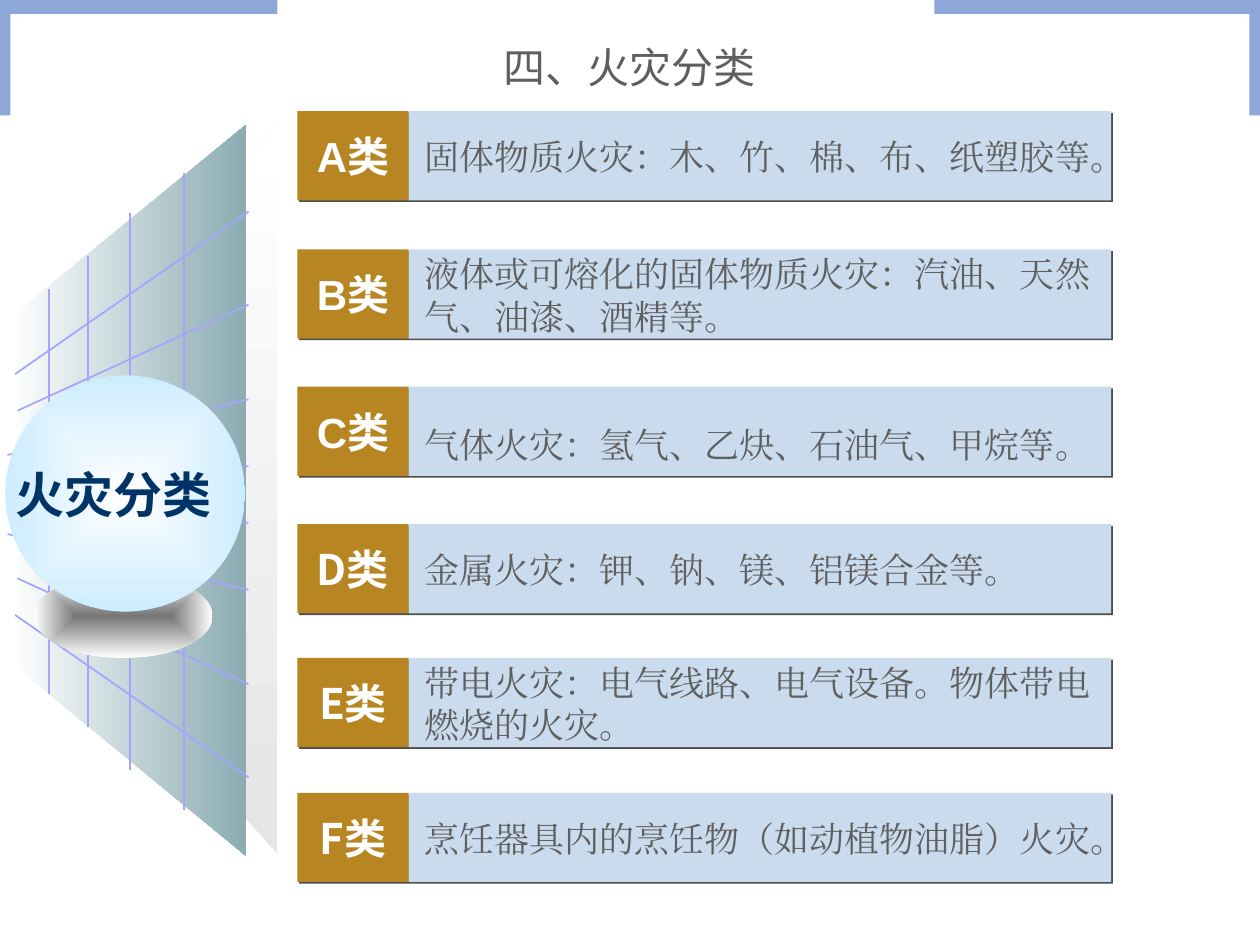
from dataclasses import dataclass

from lxml.etree import SubElement
from pptx import Presentation
from pptx.dml.color import RGBColor
from pptx.enum.lang import MSO_LANGUAGE_ID as Language
from pptx.enum.shapes import MSO_CONNECTOR as Connector, MSO_SHAPE as Shape
from pptx.enum.text import MSO_ANCHOR as Anchor, MSO_AUTO_SIZE as AutoSize, PP_ALIGN as Align
from pptx.oxml.ns import qn
from pptx.util import Pt


@dataclass(frozen=True)
class Theme:
    label: str = "B78623"
    bar: str = "CADBEE"
    shadow: str = "4D4D4D"
    text: str = "5F5F5F"
    white: str = "FFFFFF"
    navy: str = "003366"
    grid: str = "A4A4FF"
    corner: str = "1A50B2"
    wall: str = "8BACB3"
    edge: str = "E5E5E5"
    ball: str = "CCECFF"
    ball_shadow: str = "767676"
    title_size: int = 24
    label_size: int = 24
    body_size: int = 20
    ball_size: int = 28


THEME = Theme()

CLASSES = [
    ("A类", "Arial", 63.5, 7.5, 360, "固体物质火灾：木、竹、棉、布、纸塑胶等。"),
    ("B类", "Arial", 142.5, 7.5, 330, "液体或可熔化的固体物质火灾：汽油、天然\n气、油漆、酒精等。"),
    ("C类", "Arial", 221, 14.5, 352, "气体火灾：氢气、乙炔、石油气、甲烷等。"),
    ("D类", "Noto Sans CJK KR", 299.5, 7.5, 330, "金属火灾：钾、钠、镁、铝镁合金等。"),
    ("E类", "Noto Sans CJK KR", 376, 7.5, 327, "带电火灾：电气线路、电气设备。物体带电\n燃烧的火灾。"),
    ("F类", "Noto Sans CJK KR", 453, 7.5, 330, "烹饪器具内的烹饪物（如动植物油脂）火灾。"),
]
LABEL_LEFT, LABEL_WIDTH, BAR_LEFT, BAR_WIDTH, ROW_HEIGHT = 170, 63.5, 233.5, 401.5, 51

GRID_RIGHT = 142
SLOPE_AXIS = 282.6
SLOPES = [(8.6, 213.8, 121), (10, 234.7, 174.2), (4.3, 260, 228.2), (10, 276.5, 266.4)]
VERTICAL_AXIS = 280.8
VERTICALS = [(105, 181.8), (74.2, 159.1), (50.4, 134.6), (28.1, 115.9)]


def color(value):
    return RGBColor.from_string(value)


def write_text(shape, text, font_name, size, text_color, align, bold=False, spacing=None):
    frame = shape.text_frame
    frame.text = text
    frame.vertical_anchor = Anchor.MIDDLE
    for paragraph in frame.paragraphs:
        paragraph.alignment = align
        if spacing:
            paragraph.line_spacing = Pt(spacing)
        for run in paragraph.runs:
            font = run.font
            font.name, font.size, font.bold = font_name, Pt(size), bold
            font.language_id = Language.SIMPLIFIED_CHINESE
            font.color.rgb = color(text_color)
            latin = font._element.find(qn("a:latin"))
            east_asian = SubElement(font._element, qn("a:ea"), typeface=font_name)
            latin.addnext(east_asian)


def add_box(slide, kind, left, top, width, height, fill=None):
    shape = slide.shapes.add_shape(kind, Pt(left), Pt(top), Pt(width), Pt(height))
    shape.shadow.inherit = False
    shape.line.fill.background()
    if fill:
        shape.fill.solid()
        shape.fill.fore_color.rgb = color(fill)
    else:
        shape.fill.background()
    return shape


def add_hard_shadow(shape):
    effects = shape._element.spPr.find(qn("a:effectLst"))
    shadow = SubElement(effects, qn("a:outerShdw"), dist=str(Pt(1.4)), dir="2700000",
                        algn="ctr", rotWithShape="0")
    SubElement(shadow, qn("a:srgbClr"), val=THEME.shadow)


def add_outline(slide, points):
    corners = [(Pt(x), Pt(y)) for x, y in points]
    builder = slide.shapes.build_freeform(*corners[0], scale=1)
    builder.add_line_segments(corners[1:], close=True)
    shape = builder.convert_to_shape()
    shape.shadow.inherit = False
    shape.line.fill.background()
    return shape


def set_gradient(shape, first, last, angle=None):
    fill = shape.fill
    fill.gradient()
    for stop, value in zip(fill.gradient_stops, (first, last)):
        stop.color.rgb = color(value)
    if angle is not None:
        fill.gradient_angle = angle
        return
    gradient = shape._element.spPr.find(qn("a:gradFill"))
    gradient.remove(gradient.find(qn("a:lin")))
    center = SubElement(gradient, qn("a:path"), {"path": "shape"})
    SubElement(center, qn("a:fillToRect"), l="50000", t="50000", r="50000", b="50000")


def add_grid_line(slide, x1, y1, x2, y2):
    line = slide.shapes.add_connector(Connector.STRAIGHT, Pt(x1), Pt(y1), Pt(x2), Pt(y2))
    line.line.color.rgb = color(THEME.grid)
    line.line.width = Pt(1)
    SubElement(line._element.spPr, qn("a:effectLst"))


def add_title(slide, text):
    title = slide.shapes.title
    title.left, title.top, title.width, title.height = Pt(80.5), Pt(19), Pt(558), Pt(38)
    write_text(title, text, "Arial", THEME.title_size, THEME.text, Align.CENTER)
    title.text_frame.auto_size = AutoSize.NONE


def add_class_row(slide, label_text, label_font, top, text_offset, text_width, description):
    label = add_box(slide, Shape.RECTANGLE, LABEL_LEFT, top, LABEL_WIDTH, ROW_HEIGHT, THEME.label)
    label.text_frame.word_wrap = False
    write_text(label, label_text, label_font, THEME.label_size, THEME.white, Align.CENTER, True)
    bar = add_box(slide, Shape.RECTANGLE, BAR_LEFT, top, BAR_WIDTH, ROW_HEIGHT, THEME.bar)
    for shape in (label, bar):
        add_hard_shadow(shape)
    body = add_box(slide, Shape.ROUNDED_RECTANGLE, BAR_LEFT, top + text_offset, text_width, 36.5)
    body.text_frame.word_wrap = False
    write_text(body, description, "Times New Roman", THEME.body_size, THEME.text,
               Align.LEFT, spacing=24.5)


def add_wall(slide):
    edge = add_outline(slide, [(158.5, 488), (137.5, 464.5), (137.5, 94.5), (158.5, 70.5)])
    set_gradient(edge, THEME.edge, THEME.white, 90)
    wall = add_outline(slide, [(140.5, 489), (6, 378.5), (6, 181.5), (140.5, 71.5)])
    set_gradient(wall, THEME.white, THEME.wall, 0)
    for left, left_y, right_y in SLOPES:
        add_grid_line(slide, left, left_y, GRID_RIGHT, right_y)
        add_grid_line(slide, left, 2 * SLOPE_AXIS - left_y, GRID_RIGHT, 2 * SLOPE_AXIS - right_y)
    for x, half in VERTICALS:
        add_grid_line(slide, x, VERTICAL_AXIS - half, x, VERTICAL_AXIS + half)


def add_ball(slide, text):
    shadow = add_box(slide, Shape.OVAL, 19.5, 328, 102, 48)
    set_gradient(shadow, THEME.ball_shadow, THEME.white)
    ball = add_box(slide, Shape.OVAL, 3, 214.5, 137, 135)
    set_gradient(ball, THEME.white, THEME.ball)
    caption = slide.shapes.add_textbox(Pt(1.5), Pt(260.5), Pt(126.5), Pt(44))
    caption.text_frame.word_wrap = False
    write_text(caption, text, "Roboto", THEME.ball_size, THEME.navy, Align.CENTER, True)


def add_corner(slide, x, direction, width):
    reach, side = x + direction * width, x + direction * 6
    corner = add_outline(slide, [(side, 8), (side, 66), (x, 66), (x, 0), (reach, 0), (reach, 8)])
    corner.fill.solid()
    corner.fill.fore_color.rgb = color(THEME.corner)
    solid = corner._element.spPr.find(qn("a:solidFill"))
    SubElement(solid[0], qn("a:alpha"), val="50000")


def main():
    presentation = Presentation()
    presentation.slide_width, presentation.slide_height = Pt(720), Pt(540)
    slide = presentation.slides.add_slide(presentation.slide_layouts[5])
    add_title(slide, "四、火灾分类")
    for row in CLASSES:
        add_class_row(slide, *row)
    add_wall(slide)
    add_ball(slide, "火灾分类")
    add_corner(slide, 0, 1, 158.5)
    add_corner(slide, 720, -1, 186)
    presentation.save("out.pptx")


if __name__ == "__main__":
    main()
